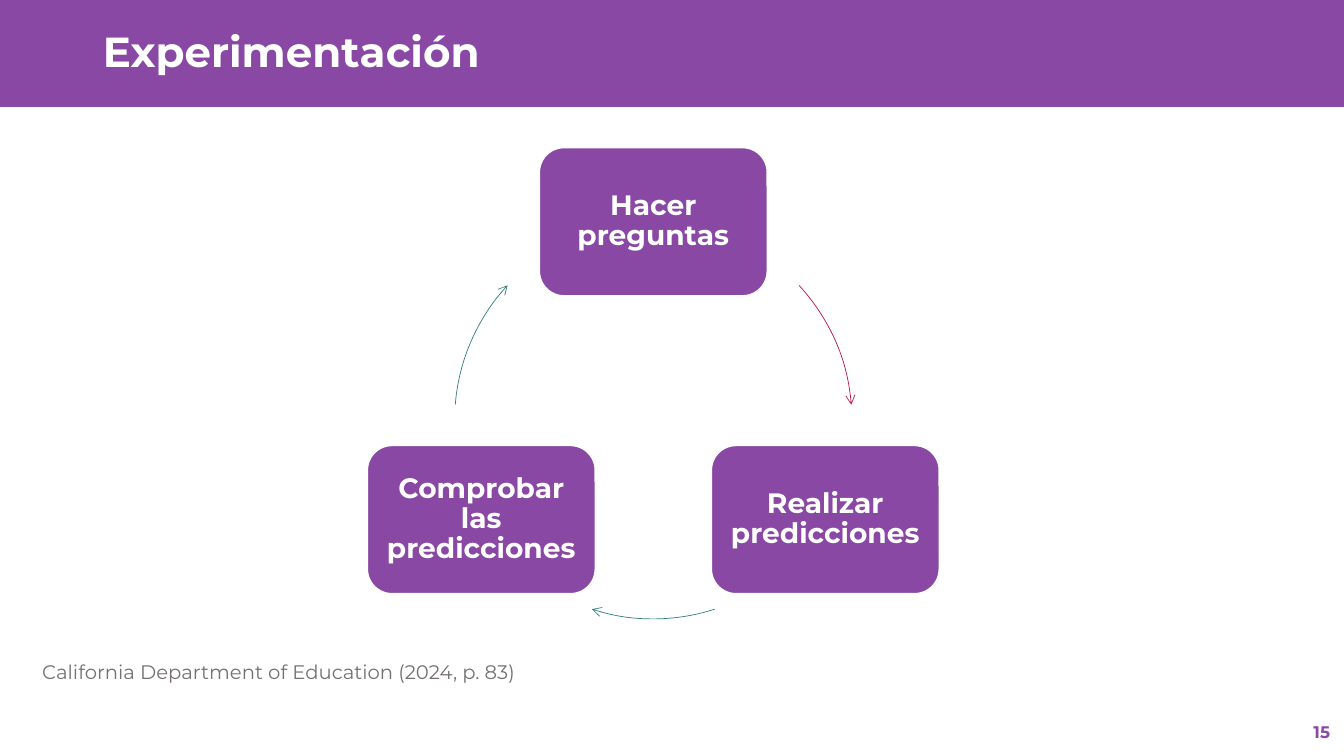
from math import cos, radians, sin

from lxml.etree import SubElement
from pptx import Presentation
from pptx.dml.color import RGBColor
from pptx.enum.shapes import MSO_SHAPE
from pptx.enum.text import MSO_ANCHOR, PP_ALIGN
from pptx.oxml.ns import qn
from pptx.util import Inches, Pt

PURPLE = RGBColor(0x89, 0x48, 0xA3)
WHITE = RGBColor(0xFF, 0xFF, 0xFF)
CRIMSON = RGBColor(0xBB, 0x16, 0x54)
TEAL = RGBColor(0x32, 0x7F, 0x7C)
GRAY = RGBColor(0x76, 0x71, 0x71)

CENTER_X, CENTER_Y, RADIUS = 6.48, 4.17, 1.97
STEP_WIDTH, STEP_HEIGHT = 2.26, 1.47
STEPS = [
    ("Hacer preguntas", -90),
    ("Realizar predicciones", 30),
    ("Comprobar las predicciones", 150),
]
ARROWS = [(317.2, 355.5, CRIMSON), (72, 108, TEAL), (184.5, 222.8, TEAL)]


class CycleSlide:
    font_name = "Montserrat"

    def __init__(self, deck):
        self.page = deck.slides.add_slide(deck.slide_layouts[5])

    def set_text(self, shape, text, size, color, bold=False,
                 align=PP_ALIGN.LEFT, anchor=MSO_ANCHOR.TOP, spacing=1.0):
        frame = shape.text_frame
        frame.word_wrap = True
        frame.vertical_anchor = anchor
        frame.text = text
        para = frame.paragraphs[0]
        para.alignment = align
        para.line_spacing = spacing
        para.font.name = self.font_name
        para.font.size = Pt(size)
        para.font.bold = bold
        para.font.color.rgb = color

    def shape(self, kind, left, top, width, height):
        shape = self.page.shapes.add_shape(
            kind, Inches(left), Inches(top), Inches(width), Inches(height))
        shape.shadow.inherit = False
        return shape

    def header(self, text):
        title = self.page.shapes.title
        title.left, title.top = Inches(0.92), Inches(0.26)
        title.width, title.height = Inches(11.82), Inches(0.56)
        self.set_text(title, text, 30, WHITE, bold=True,
                      anchor=MSO_ANCHOR.MIDDLE, spacing=0.9)
        band = self.shape(MSO_SHAPE.RECTANGLE, 0, 0, 13.33, 1.06)
        band.fill.solid()
        band.fill.fore_color.rgb = PURPLE
        band.line.fill.background()
        title.element.addprevious(band.element)

    def step(self, text, angle):
        left = CENTER_X + RADIUS * cos(radians(angle)) - STEP_WIDTH / 2
        top = CENTER_Y + RADIUS * sin(radians(angle)) - STEP_HEIGHT / 2
        box = self.shape(MSO_SHAPE.ROUNDED_RECTANGLE, left, top, STEP_WIDTH, STEP_HEIGHT)
        box.fill.solid()
        box.fill.fore_color.rgb = PURPLE
        box.line.color.rgb = WHITE
        box.line.width = Pt(1)
        frame = box.text_frame
        frame.margin_left = frame.margin_right = Inches(0.08)
        frame.margin_top = frame.margin_bottom = Inches(0.08)
        self.set_text(box, text, 20, WHITE, bold=True, align=PP_ALIGN.CENTER,
                      anchor=MSO_ANCHOR.MIDDLE, spacing=0.9)

    def arrow(self, start, end, color):
        arc = self.shape(MSO_SHAPE.ARC, CENTER_X - RADIUS, CENTER_Y - RADIUS,
                         2 * RADIUS, 2 * RADIUS)
        arc.adjustments[0] = start * 0.6
        arc.adjustments[1] = end * 0.6
        arc.fill.background()
        arc.line.color.rgb = color
        arc.line.width = Pt(0.5)
        outline = arc.element.spPr.find(qn("a:ln"))
        SubElement(outline, qn("a:tailEnd"), type="arrow")

    def label(self, text, left, top, width, height, size, color, **style):
        box = self.page.shapes.add_textbox(
            Inches(left), Inches(top), Inches(width), Inches(height))
        self.set_text(box, text, size, color, **style)


def main():
    deck = Presentation()
    deck.slide_width, deck.slide_height = Inches(13.33), Inches(7.5)
    slide = CycleSlide(deck)
    slide.header("Experimentación")
    for step, arrow in zip(STEPS, ARROWS):
        slide.step(*step)
        slide.arrow(*arrow)
    slide.label("California Department of Education (2024, p. 83)",
                0.32, 6.5, 6.67, 0.34, 14, GRAY)
    slide.label("15", 10.29, 7.06, 3, 0.4, 12, PURPLE, bold=True,
                align=PP_ALIGN.RIGHT, anchor=MSO_ANCHOR.MIDDLE)
    deck.save("out.pptx")


if __name__ == "__main__":
    main()
